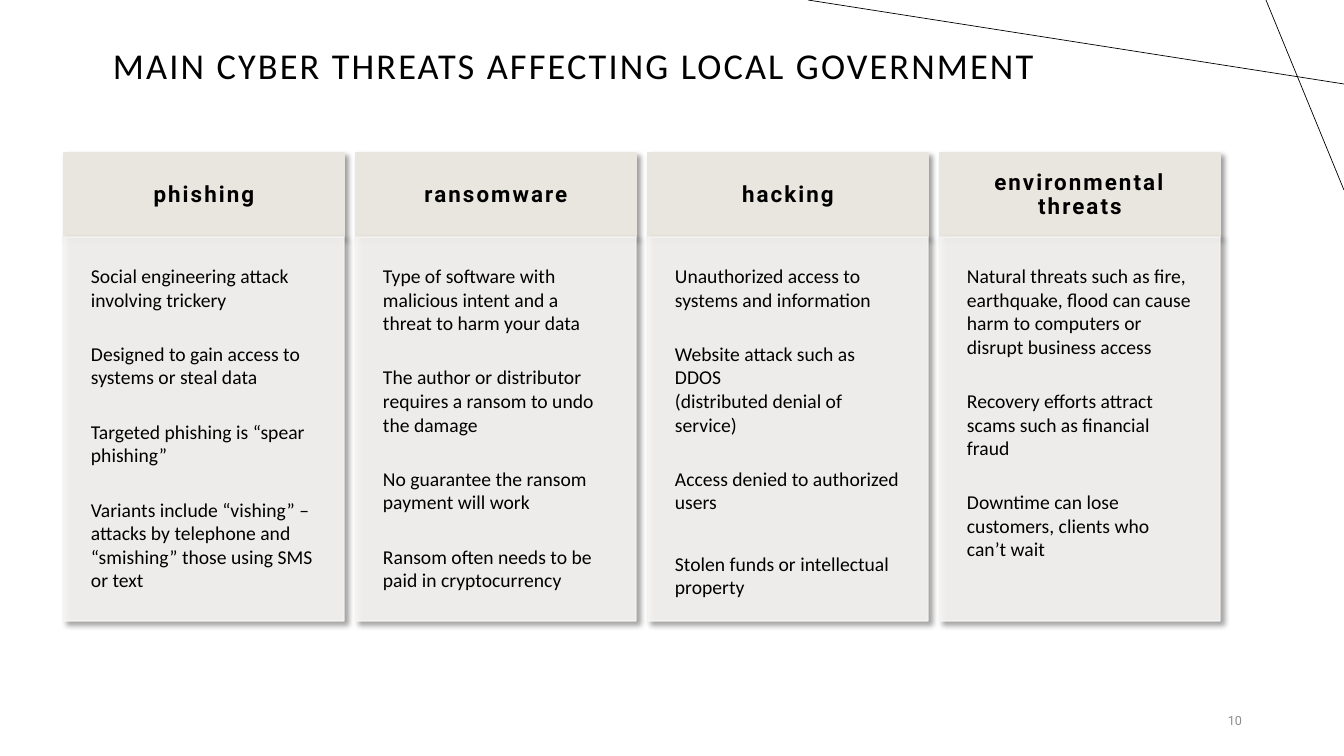
from lxml import etree
from pptx import Presentation
from pptx import util as u
from pptx.dml.color import RGBColor
from pptx.enum import shapes, text
from pptx.oxml import ns

EMU_PER_PX = 914400 / 100.8
BLACK = RGBColor(0x00, 0x00, 0x00)
GRAY = RGBColor(0x8C, 0x8C, 0x8C)
SAND = RGBColor(0xE9, 0xE6, 0xDF)
CREAM = RGBColor(0xF7, 0xF5, 0xF3)

LEFT, PITCH, WIDTH = 64, 292, 280
HEADER_TOP, HEADER_HEIGHT, BODY_HEIGHT = 153, 84, 384
GAP, WIDE_GAP = 22, 27

THREATS = [
    ("phishing", [
        ("Social engineering attack involving trickery", 0),
        ("Designed to gain access to systems or steal data", GAP),
        ("Targeted phishing is “spear phishing”", GAP),
        ("Variants include “vishing” – attacks by telephone and "
         "“smishing” those using SMS or text", GAP),
    ]),
    ("ransomware", [
        ("Type of software with malicious intent and a threat to harm your data", 0),
        ("The author or distributor requires a ransom to undo the damage", GAP),
        ("No guarantee the ransom payment will work", GAP),
        ("Ransom often needs to be paid in cryptocurrency", GAP),
    ]),
    ("hacking", [
        ("Unauthorized access to systems and information", 0),
        ("Website attack such as DDOS\v(distributed denial of service)", GAP),
        ("Access denied to authorized users", GAP),
        ("Stolen funds or intellectual property", WIDE_GAP),
    ]),
    ("environmental threats", [
        ("Natural threats such as fire, earthquake, flood can cause harm "
         "to computers or disrupt business access", 0),
        ("Recovery efforts attract scams such as financial fraud", GAP),
        ("Downtime can lose customers, clients who can’t wait", GAP),
    ]),
]


def px(length):
    return u.Emu(round(length * EMU_PER_PX))


def add_node(parent, tag, **attributes):
    return etree.SubElement(parent, ns.qn(tag), attributes)


def write(box, paragraphs, font="Calibri", size=14, color=BLACK, bold=False,
          align=text.PP_ALIGN.LEFT, anchor=text.MSO_ANCHOR.TOP,
          inset=10, line_spacing=1.0, tracking=0):
    frame = box.text_frame
    frame.word_wrap = True
    frame.vertical_anchor = anchor
    frame.margin_left = frame.margin_right = px(inset)
    frame.margin_top = frame.margin_bottom = px(inset)
    for index, (words, gap) in enumerate(paragraphs):
        para = frame.add_paragraph() if index else frame.paragraphs[0]
        para.text = words
        para.alignment = align
        para.line_spacing = line_spacing
        para.space_before = u.Pt(gap)
        for span in para.runs:
            span.font.name = font
            span.font.size = u.Pt(size)
            span.font.bold = bold
            span.font.color.rgb = color
            if tracking:
                span.font._element.set("spc", str(tracking))
        for line_break in para._p.findall(ns.qn("a:br")):
            add_node(line_break, "a:rPr", sz=str(size * 100))


class SlideBuilder:
    def __init__(self, deck):
        self.page = deck.slides.add_slide(deck.slide_layouts[6])

    def line(self, start, end):
        connector = self.page.shapes.add_connector(
            shapes.MSO_CONNECTOR.STRAIGHT, *map(px, start + end))
        connector.line.color.rgb = BLACK
        connector.line.width = u.Pt(0.5)
        add_node(connector._element.spPr, "a:effectLst")

    def label(self, bounds, words, **style):
        box = self.page.shapes.add_textbox(*map(px, bounds))
        write(box, [(words, 0)], anchor=text.MSO_ANCHOR.MIDDLE, **style)

    def panel(self, bounds, color, paragraphs, opacity=100, **style):
        box = self.page.shapes.add_shape(
            shapes.MSO_SHAPE.RECTANGLE, *map(px, bounds))
        box.fill.solid()
        box.fill.fore_color.rgb = color
        box.line.color.rgb = color
        box.line.width = u.Pt(1)
        properties = box._element.spPr
        if opacity < 100:
            for shade in properties.findall(".//" + ns.qn("a:srgbClr")):
                add_node(shade, "a:alpha", val=str(opacity * 1000))
        self.shadow(properties)
        write(box, paragraphs, **style)

    def shadow(self, properties):
        effects = add_node(properties, "a:effectLst")
        outer = add_node(effects, "a:outerShdw", blurRad=str(u.Pt(4)),
                         dist=str(u.Pt(3)), dir="2700000", algn="tl",
                         rotWithShape="0")
        shade = add_node(outer, "a:srgbClr", val=str(BLACK))
        add_node(shade, "a:alpha", val="40000")

    def threat(self, column, heading, points):
        left = LEFT + column * PITCH
        self.panel((left, HEADER_TOP, WIDTH, HEADER_HEIGHT), SAND,
                   [(heading, 0)], font="Roboto", size=16, bold=True,
                   align=text.PP_ALIGN.CENTER, anchor=text.MSO_ANCHOR.MIDDLE,
                   inset=22, line_spacing=0.9, tracking=150)
        self.panel((left, HEADER_TOP + HEADER_HEIGHT, WIDTH, BODY_HEIGHT),
                   CREAM, points, opacity=90, inset=27)


def main():
    deck = Presentation()
    deck.slide_width, deck.slide_height = px(1344), px(756)
    slide = SlideBuilder(deck)
    slide.line((1344, 84), (808, 0))
    slide.line((1266, 0), (1344, 190))
    slide.label((950, 701, 302, 40), "10", font="Roboto", size=9, color=GRAY,
                align=text.PP_ALIGN.RIGHT)
    slide.label((9, 19, 1130, 98), "MAIN CYBER THREATS AFFECTING LOCAL GOVERNMENT",
                size=26, align=text.PP_ALIGN.CENTER, line_spacing=0.9, tracking=150)
    for column, (heading, points) in enumerate(THREATS):
        slide.threat(column, heading, points)
    deck.save("out.pptx")


if __name__ == "__main__":
    main()
